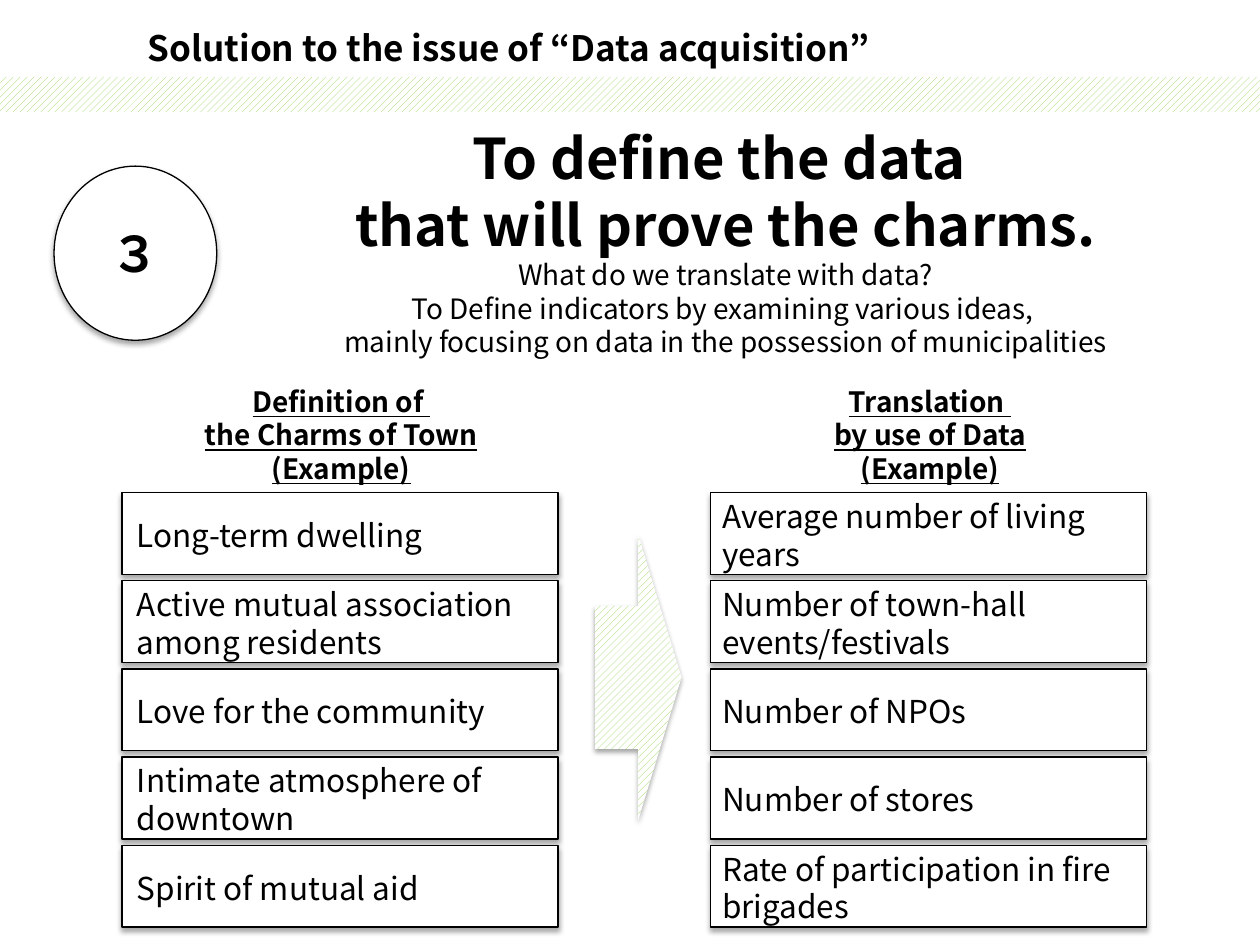
import copy

import pptx
import pptx.dml.color
import pptx.enum.dml
import pptx.enum.shapes
import pptx.enum.text
import pptx.oxml
import pptx.oxml.ns
import pptx.util

Cm, Pt = pptx.util.Cm, pptx.util.Pt
Kind = pptx.enum.shapes.MSO_SHAPE
Align = pptx.enum.text.PP_ALIGN
Anchor = pptx.enum.text.MSO_ANCHOR
qn = pptx.oxml.ns.qn

FONT = "Noto Sans CJK JP"
HUES = {"ink": "000000", "paper": "FFFFFF", "green": "92D050"}
CHARMS = [
    "Long-term dwelling",
    "Active mutual association among residents",
    "Love for the community",
    "Intimate atmosphere of downtown",
    "Spirit of mutual aid",
]
DATA = [
    "Average number of living years",
    "Number of town-hall events/festivals",
    "Number of NPOs",
    "Number of stores",
    "Rate of participation in fire brigades",
]


def hue(name):
    return pptx.dml.color.RGBColor.from_string(HUES[name])


def write(frame, text, size=18, bold=False, line=False, align=Align.LEFT):
    """Add one paragraph; a \\v in the text is a line break."""
    frame.word_wrap = True
    para = frame.paragraphs[0]
    if para.text:
        para = frame.add_paragraph()
    para.text = text
    para.alignment = align
    for run in para.runs:
        font = run.font
        font.name, font.size, font.bold, font.underline = FONT, Pt(size), bold, line
        font.color.rgb = hue("ink")
        mark = run._r.get_or_add_rPr()
        east = mark.makeelement(qn("a:ea"), {"typeface": FONT})
        mark.find(qn("a:latin")).addnext(east)
    for gap in para._p.findall(qn("a:br")):
        gap.append(copy.deepcopy(mark))


def shade(shape):
    """Soft shadow straight below the shape."""
    shape.shadow.inherit = False
    xml = (
        f'<a:outerShdw {pptx.oxml.ns.nsdecls("a")} blurRad="{Pt(3.1)}" dist="{Pt(1.8)}"'
        f' dir="5400000" rotWithShape="0"><a:srgbClr val="{HUES["ink"]}">'
        '<a:alpha val="35000"/></a:srgbClr></a:outerShdw>'
    )
    list_ = shape._element.spPr.find(qn("a:effectLst"))
    list_.append(pptx.oxml.parse_xml(xml))


def block(slide, kind, box):
    """White shape with a thin outline and a shadow."""
    shape = slide.shapes.add_shape(kind, *map(Cm, box))
    shape.fill.solid()
    shape.fill.fore_color.rgb = hue("paper")
    shape.line.color.rgb = hue("ink")
    shape.line.width = Pt(0.75)
    shade(shape)
    shape.text_frame.vertical_anchor = Anchor.MIDDLE
    return shape


def hatch(slide, kind, box):
    """Green striped shape without outline."""
    shape = slide.shapes.add_shape(kind, *map(Cm, box))
    shape.fill.patterned()
    shape.fill.pattern = pptx.enum.dml.MSO_PATTERN.WIDE_UPWARD_DIAGONAL
    shape.fill.fore_color.rgb = hue("green")
    shape.fill.back_color.rgb = hue("paper")
    shape.line.fill.background()
    shape.shadow.inherit = False
    return shape


def header(slide, left, top, width, height):
    # Title and the striped band below it
    title = slide.shapes.title
    title.left, title.top = Cm(left + 2.72), Cm(top + 0.41)
    title.width, title.height = Cm(21.21), Cm(1.12)
    frame = title.text_frame
    frame.auto_size = pptx.enum.text.MSO_AUTO_SIZE.NONE
    frame.vertical_anchor = Anchor.TOP
    write(frame, "Solution to the issue of “Data acquisition”", size=20, bold=True)
    hatch(slide, Kind.RECTANGLE, (left, top + height - 0.71, width, 0.71))


def lead(slide, left, top, width, height):
    # Numbered circle
    disc = block(slide, Kind.OVAL, (left, top + 0.99, 3.28, 3.51))
    write(disc.text_frame, "３", size=28, bold=True, align=Align.CENTER)

    # Main message
    box = (left + 3.15, top, width - 3.15, height)
    frame = slide.shapes.add_textbox(*map(Cm, box)).text_frame
    write(frame, "To define the data \vthat will prove the charms.",
          size=32, bold=True, align=Align.CENTER)
    for text in (
        "What do we translate with data?",
        "To Define indicators by examining various ideas, \v"
        "mainly focusing on data in the possession of municipalities",
    ):
        write(frame, text, size=16, align=Align.CENTER)


def column(slide, left, top, width, height, head, items, inset):
    # Underlined heading
    tall, row = 2.31, 1.65
    box = (left + 0.28, top, width - 0.51, tall)
    frame = slide.shapes.add_textbox(*map(Cm, box)).text_frame
    for text in (head, "(Example)"):
        write(frame, text, size=16, bold=True, line=True, align=Align.CENTER)

    # Evenly spaced boxes
    step = (height - tall - row) / (len(items) - 1)
    for i, text in enumerate(items):
        cell = block(slide, Kind.RECTANGLE, (left, top + tall + i * step, width, row))
        frame = cell.text_frame
        frame.margin_left = Cm(inset)
        frame.margin_top, frame.margin_bottom = Cm(0.05), Cm(0)
        write(frame, text)


def arrow(slide, left, top, width, height):
    # Arrow drawn downwards, then turned to point right
    shape = hatch(slide, Kind.DOWN_ARROW, (left, top, width, height))
    shape.rotation = 270
    shade(shape)


def main():
    deck = pptx.Presentation()
    deck.slide_width, deck.slide_height = Cm(25.4), Cm(19.05)
    slide = deck.slides.add_slide(deck.slide_layouts[5])
    header(slide, 0, 0, 25.4, 2.26)
    lead(slide, 1.09, 2.36, 23.93, 5.05)
    column(slide, 2.46, 7.62, 8.79, 11.07,
           "Definition of \vthe Charms of Town", CHARMS, 0.3)
    arrow(slide, 9.98, 12.78, 5.77, 1.75)
    column(slide, 14.33, 7.62, 8.79, 11.07,
           "Translation \vby use of Data", DATA, 0.23)
    deck.save("out.pptx")


if __name__ == "__main__":
    main()
